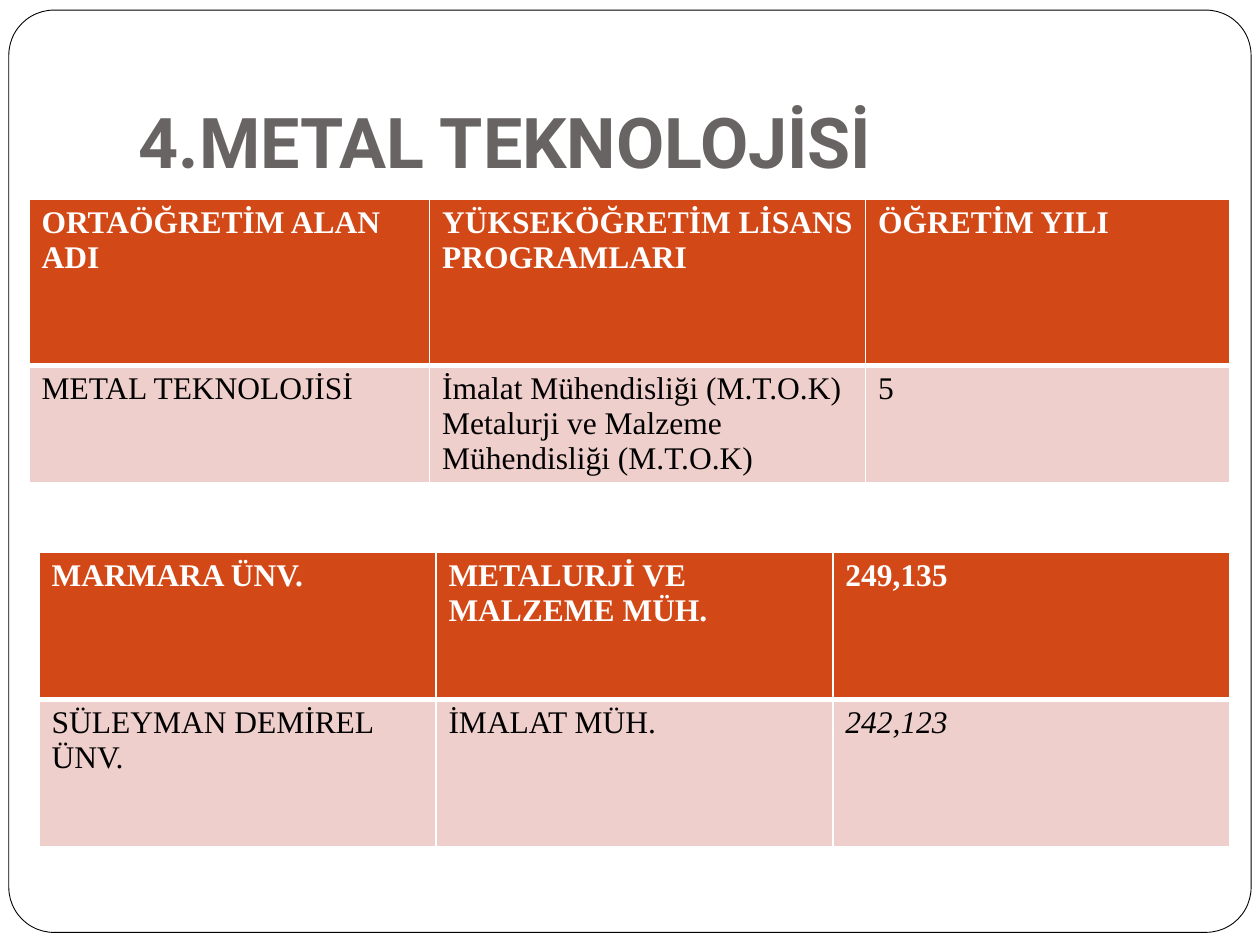
from dataclasses import dataclass
from itertools import product

from lxml.etree import SubElement
from pptx import Presentation
from pptx.dml.color import RGBColor
from pptx.enum.shapes import MSO_SHAPE
from pptx.enum.text import MSO_ANCHOR, PP_ALIGN
from pptx.oxml.ns import qn
from pptx.util import Inches, Pt

CELL = 0.1  # grid step in inches: 100 columns by 75 rows


def grid(*steps):
    return [Inches(n * CELL) for n in steps]


def color(value):
    return RGBColor.from_string(value)


@dataclass
class Deck:
    s: object
    title_font: str = "Roboto"
    body_font: str = "Times New Roman"
    title_color: str = "696464"
    header_fill: str = "D34817"
    body_fill: str = "EFCFCC"
    light: str = "FFFFFF"
    dark: str = "000000"

    def frame(self, *box):
        sp = self.s.shapes.add_shape(MSO_SHAPE.ROUNDED_RECTANGLE, *grid(*box))
        sp.adjustments[0] = 0.049
        sp.shadow.inherit = False
        sp.fill.solid()
        sp.fill.fore_color.rgb = color(self.light)
        sp.line.color.rgb = color(self.dark)
        sp.line.width = Pt(0.5)
        # Send behind the title
        self.s.shapes._spTree.insert(2, sp._element)

    def title(self, text, *box):
        sp = self.s.shapes.title
        sp.left, sp.top, sp.width, sp.height = grid(*box)
        tf = sp.text_frame
        tf.text = text
        tf.word_wrap = True
        tf.vertical_anchor = MSO_ANCHOR.BOTTOM
        tf.margin_left, tf.margin_top, tf.margin_right, tf.margin_bottom = grid(1, 0.5, 1, 1)
        p = tf.paragraphs[0]
        p.alignment = PP_ALIGN.LEFT
        self.style(p, self.title_font, 40, self.title_color, bold=True)

    def style(self, p, name, size, rgb, bold=False, italic=False):
        font = p.font
        font.name, font.size = name, Pt(size)
        font.bold, font.italic = bold, italic
        font.color.rgb = color(rgb)

    def borders(self, cell, bottom):
        tc_pr = cell._tc.get_or_add_tcPr()
        widths = {"a:lnL": 1, "a:lnR": 1, "a:lnT": 1, "a:lnB": bottom}
        for i, (tag, width) in enumerate(widths.items()):
            ln = SubElement(tc_pr, qn(tag), w=str(Pt(width)))
            fill = SubElement(ln, qn("a:solidFill"))
            SubElement(fill, qn("a:srgbClr"), val=self.light)
            tc_pr.insert(i, ln)  # borders come before the cell fill

    def table(self, left, top, cols, rows, data, italic=()):
        box = grid(left, top, sum(cols), sum(rows))
        table = self.s.shapes.add_table(len(rows), len(cols), *box).table
        table.horz_banding = False
        for col, width in zip(table.columns, grid(*cols)):
            col.width = width
        for row, height in zip(table.rows, grid(*rows)):
            row.height = height
        for r, c in product(range(len(rows)), range(len(cols))):
            cell, header = table.cell(r, c), r == 0
            cell.text = data[r][c]
            cell.fill.solid()
            cell.fill.fore_color.rgb = color(self.header_fill if header else self.body_fill)
            self.borders(cell, bottom=3 if header else 1)
            for p in cell.text_frame.paragraphs:
                self.style(p, self.body_font, 18, self.light if header else self.dark,
                           bold=header, italic=(r, c) in italic)


def main():
    prs = Presentation()
    prs.slide_width, prs.slide_height = grid(100, 75)
    deck = Deck(prs.slides.add_slide(prs.slide_layouts[5]))

    # Frame and title
    deck.frame(0.7, 0.8, 98.6, 73.2)
    deck.title("4.METAL TEKNOLOJİSİ", 10, 3, 85, 12.5)

    # Degree programmes
    deck.table(2.3, 15.8, [31.8, 34.6, 28.9], [13.2, 9.2], [
        ["ORTAÖĞRETİM ALAN ADI", "YÜKSEKÖĞRETİM LİSANS PROGRAMLARI", "ÖĞRETİM YILI"],
        ["METAL TEKNOLOJİSİ",
         "İmalat Mühendisliği (M.T.O.K)\nMetalurji ve Malzeme Mühendisliği (M.T.O.K)",
         "5"],
    ])

    # University scores
    deck.table(3.1, 43.8, [31.5] * 3, [11.7] * 2, [
        ["MARMARA ÜNV.", "METALURJİ VE MALZEME MÜH.", "249,135"],
        ["SÜLEYMAN DEMİREL ÜNV.", "İMALAT MÜH.", "242,123"],
    ], italic={(1, 2)})

    prs.save("out.pptx")


if __name__ == "__main__":
    main()
